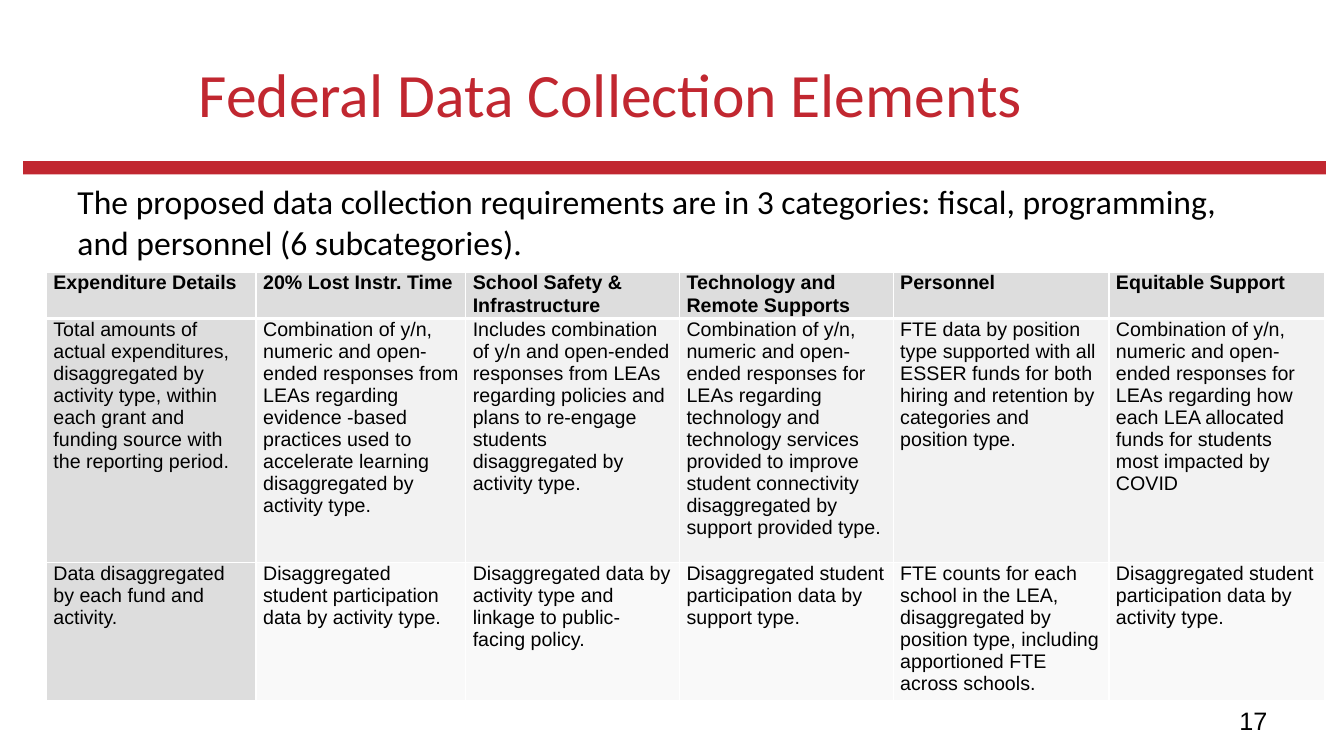
from lxml import etree
from pptx import Presentation, util as u
from pptx.dml.color import RGBColor
from pptx.enum import shapes, text
from pptx.oxml import ns

PX = 9144  # EMU per px, 100 px to the inch
RED, BLACK, WHITE = "C12730", "000000", "FFFFFF"
HEAD_FILL, ROW_FILLS = "DDDDDD", ["DDDDDD", "F2F2F2", "F9F9F9"]

TITLE = "Federal Data Collection Elements"
INTRO = ("The proposed data collection requirements are in 3 categories: "
         "fiscal, programming, and personnel (6 subcategories).")
PAGE_NUMBER = "17"
COLUMN_WIDTHS = [208, 208, 212, 212, 214, 214]
ROW_HEIGHTS = [46, 242, 137]
ROWS = [
    ["Expenditure Details", "20% Lost Instr. Time", "School Safety & Infrastructure",
     "Technology and Remote Supports", "Personnel", "Equitable Support"],
    ["Total amounts of actual expenditures, disaggregated by activity type, within each "
     "grant and funding source with the reporting period.",
     "Combination of y/n, numeric and open-ended responses from LEAs regarding "
     "evidence -based practices used to accelerate learning disaggregated by activity type.",
     "Includes combination of y/n and open-ended responses from LEAs regarding policies "
     "and plans to re-engage students disaggregated by activity type.",
     "Combination of y/n, numeric and open-ended responses for LEAs regarding technology "
     "and technology services provided to improve student connectivity disaggregated by "
     "support provided type.",
     "FTE data by position type supported with all ESSER funds for both hiring and "
     "retention by categories and position type.",
     "Combination of y/n, numeric and open-ended responses for LEAs regarding how each "
     "LEA allocated funds for students most impacted by COVID"],
    ["Data disaggregated by each fund and activity.",
     "Disaggregated student participation data by activity type.",
     "Disaggregated data by activity type and linkage to public-facing policy.",
     "Disaggregated student participation data by support type.",
     "FTE counts for each school in the LEA, disaggregated by position type, including "
     "apportioned FTE across schools.",
     "Disaggregated student participation data by activity type."],
]


def color(value):
    return RGBColor.from_string(value)


def place(left, top, width, height):
    return [u.Emu(length * PX) for length in (left, top, width, height)]


def write(frame, words, size, font="Arial", ink=BLACK, bold=False,
          align=text.PP_ALIGN.LEFT, anchor=text.MSO_ANCHOR.TOP):
    frame.word_wrap = True
    frame.auto_size = text.MSO_AUTO_SIZE.NONE
    frame.vertical_anchor = anchor
    para = frame.paragraphs[0]
    para.alignment = align
    span = para.add_run()
    span.text = words
    span.font.size, span.font.name, span.font.bold = u.Pt(size), font, bold
    span.font.color.rgb = color(ink)


def add_border(cell, side, points):
    line = etree.SubElement(cell._tc.get_or_add_tcPr(), ns.qn("a:ln" + side),
                            w=str(u.Pt(points)))
    fill = etree.SubElement(line, ns.qn("a:solidFill"))
    etree.SubElement(fill, ns.qn("a:srgbClr"), val=WHITE)


def fill_cell(cell, words, row, column):
    cell.margin_left = cell.margin_right = u.Emu(7 * PX)
    cell.margin_top = cell.margin_bottom = 0
    # The rule under the header row is thicker than the rest
    for side, edge_row in (("L", None), ("R", None), ("T", 1), ("B", 0)):
        add_border(cell, side, 3 if row == edge_row else 1)
    cell.fill.solid()
    cell.fill.fore_color.rgb = color(HEAD_FILL if column == 0 else ROW_FILLS[row])
    para = cell.text_frame.paragraphs[0]
    span = para.add_run()
    span.text = words
    span.font.size, span.font.name, span.font.bold = u.Pt(14), "Arial", row == 0
    span.font.color.rgb = color(BLACK)


def add_requirements_table(page):
    frame = page.shapes.add_table(len(ROWS), len(COLUMN_WIDTHS),
                                  *place(46, 270, sum(COLUMN_WIDTHS), sum(ROW_HEIGHTS)))
    table = frame.table
    table.first_row = table.horz_banding = False
    for column, width in zip(table.columns, COLUMN_WIDTHS):
        column.width = u.Emu(width * PX)
    for row, height in zip(table.rows, ROW_HEIGHTS):
        row.height = u.Emu(height * PX)
    for r, row_words in enumerate(ROWS):
        for c, words in enumerate(row_words):
            fill_cell(table.cell(r, c), words, r, c)


def main():
    deck = Presentation()
    deck.slide_width, deck.slide_height = place(0, 0, 1333, 750)[2:]
    page = deck.slides.add_slide(deck.slide_layouts[5])

    title = page.shapes.title
    title.left, title.top, title.width, title.height = place(187, 30, 1126, 125)
    write(title.text_frame, TITLE, 44, font="Calibri", ink=RED,
          anchor=text.MSO_ANCHOR.MIDDLE)

    rule = page.shapes.add_shape(shapes.MSO_SHAPE.RECTANGLE, *place(23, 160, 1292, 13))
    rule.shadow.inherit = False
    rule.fill.solid()
    rule.fill.fore_color.rgb = color(RED)
    rule.line.fill.background()

    intro = page.shapes.add_textbox(*place(67, 175, 1200, 495))
    write(intro.text_frame, INTRO, 24, font="Calibri")
    number = page.shapes.add_textbox(*place(956, 695, 311, 40))
    write(number.text_frame, PAGE_NUMBER, 18, align=text.PP_ALIGN.RIGHT)

    add_requirements_table(page)
    deck.save("out.pptx")


if __name__ == "__main__":
    main()
